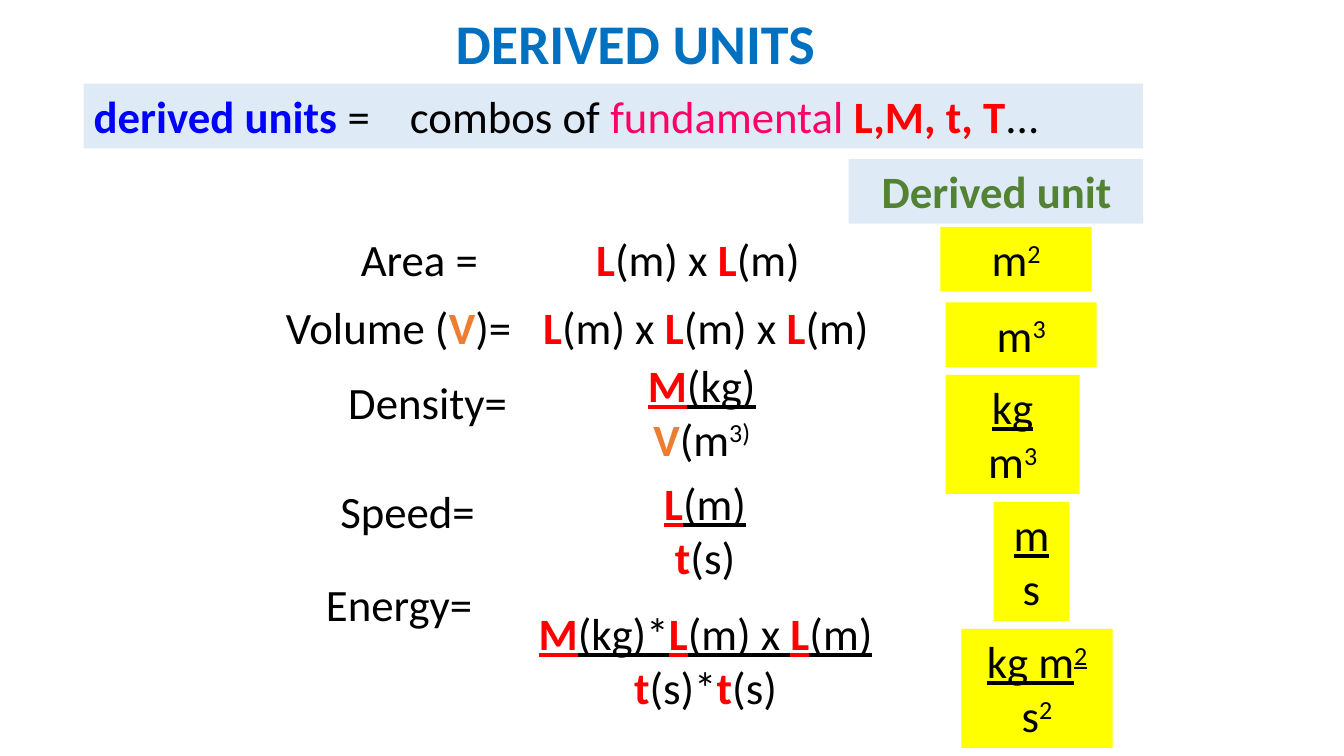
from pptx import Presentation
from pptx import util as u
from pptx.dml.color import RGBColor
from pptx.enum import shapes, text
from lxml import etree

COLORS = {
    "black": "000000", "blue": "0000FF", "pink": "FF0066", "red": "FF0000",
    "orange": "ED7D31", "green": "548235", "title": "0070C0",
    "pale": "DEEBF7", "yellow": "FFFF00", "white": "FFFFFF",
}
NAMESPACE = "http://schemas.openxmlformats.org/drawingml/2006/main"
LEFT, CENTER = text.PP_ALIGN.LEFT, text.PP_ALIGN.CENTER
HEIGHTS = {1: 1.63, 2: 3.0}


def plain(words, **style):
    return words, {"color": "black", **style}


def bold(words, color="red", **style):
    return words, {"color": color, "bold": True, **style}


def power(words, **style):
    return plain(words, raised=True, **style)


class UnitsSlide:
    font = "Calibri"
    size = 32

    def __init__(self, deck):
        self.page = deck.slides.add_slide(deck.slide_layouts[5])

    def place(self, box, left, top, width, height):
        frame = {"left": left, "top": top, "width": width, "height": height}
        for name, value in frame.items():
            setattr(box, name, u.Cm(value))

    def fill(self, box, color):
        box.fill.solid()
        box.fill.fore_color.rgb = RGBColor.from_string(COLORS[color])

    def add_lines(self, box, lines, align=CENTER, size=None, inset=0.25):
        frame = box.text_frame
        layout = {
            "word_wrap": True,
            "auto_size": text.MSO_AUTO_SIZE.SHAPE_TO_FIT_TEXT,
            "vertical_anchor": text.MSO_ANCHOR.TOP,
            "margin_left": u.Cm(inset),
        }
        for name, value in layout.items():
            setattr(frame, name, value)
        for index, line in enumerate(lines):
            para = frame.add_paragraph() if index else frame.paragraphs[0]
            para.alignment = align
            for words, style in line:
                self.add_span(para, words, size or self.size, **style)

    def add_span(self, para, words, size, color, bold=False, underline=False, raised=False):
        span = para.add_run()
        span.text = words
        values = {"name": self.font, "size": u.Pt(size), "bold": bold, "underline": underline}
        for name, value in values.items():
            setattr(span.font, name, value)
        span.font.color.rgb = RGBColor.from_string(COLORS[color])
        if raised:
            span._r.get_or_add_rPr().set("baseline", "30000")

    def add_title(self, words, left, top, width, height):
        box = self.page.shapes.title
        self.place(box, left, top, width, height)
        self.fill(box, "white")
        self.add_lines(box, [[bold(words, "title")]], LEFT, 40)

    def add_label(self, left, top, width, lines, **style):
        box = self.page.shapes.add_textbox(0, 0, 0, 0)
        self.place(box, left, top, width, HEIGHTS[len(lines)])
        self.add_lines(box, lines, **style)

    def add_panel(self, left, top, width, lines, color="yellow", **style):
        box = self.page.shapes.add_shape(shapes.MSO_SHAPE.RECTANGLE, 0, 0, 0, 0)
        self.place(box, left, top, width, HEIGHTS[len(lines)])
        box.shadow.inherit = False
        box.line.fill.background()
        self.fill(box, color)
        self.add_lines(box, lines, **style)
        return box

    def add_tab_stop(self, box, position):
        properties = box.text_frame.paragraphs[0]._p.get_or_add_pPr()
        stops = etree.SubElement(properties, f"{{{NAMESPACE}}}tabLst")
        etree.SubElement(stops, f"{{{NAMESPACE}}}tab", pos=str(u.Cm(position)), algn="l")


def main():
    deck = Presentation()
    deck.slide_width, deck.slide_height = u.Cm(33.87), u.Cm(19.05)
    slide = UnitsSlide(deck)
    slide.add_title("DERIVED UNITS", 11.23, 0.08, 10.8, 1.95)

    definition = [
        bold("derived units ", "blue"), plain("=\tcombos of "),
        plain("fundamental ", color="pink"), bold("L,M, t, T"), plain("..."),
    ]
    banner = slide.add_panel(2.11, 2.11, 26.7, [definition], "pale", align=LEFT)
    slide.add_tab_stop(banner, 7.97)
    slide.add_panel(21.39, 4.01, 7.42, [[bold("Derived unit", "green")]], "pale",
                    align=LEFT, inset=0.83)

    names = [
        (7.62, 5.72, 4.88, [plain("Area =")], 1.27),
        (6.55, 7.42, 6.99, [plain("Volume ("), bold("V", "orange"), plain(")=")], 0.25),
        (8.05, 9.32, 5.46, [plain("Density=")], 0.25),
        (8.05, 12.07, 4.45, [plain("Speed=")], 0.25),
        (7.62, 14.4, 4.88, [plain("Energy=")], 0.25),
    ]
    for left, top, width, line, inset in names:
        slide.add_label(left, top, width, [line], inset=inset)

    line_under = {"underline": True}
    length, times = bold("L"), plain("(m) x ")
    meters, seconds = plain("(m)"), bold("t")
    top_length, top_meters = bold("L", **line_under), plain("(m)", **line_under)
    top_mass = bold("M", **line_under)
    formulas = [
        (14.22, 5.72, 6.74, [[length, times, length, meters]]),
        (13.13, 7.42, 9.32, [[length, times, length, times, length, meters]]),
        (13.34, 8.89, 8.69, [[top_mass, plain("(kg)", **line_under)],
                             [bold("V", "orange"), plain("(m"), power("3)")]]),
        (13.54, 11.86, 8.46, [[top_length, top_meters], [seconds, plain("(s)")]]),
        (12.8, 15.14, 9.96, [[top_mass, plain("(kg)*", **line_under), top_length,
                              plain("(m) x ", **line_under), top_length, top_meters],
                             [seconds, plain("(s)*"), seconds, plain("(s)")]]),
    ]
    for formula in formulas:
        slide.add_label(*formula)

    units = [
        (23.7, 5.72, 3.81, [[plain("m"), power("2")]]),
        (23.83, 7.62, 3.81, [[plain("m"), power("3")]]),
        (23.83, 9.45, 3.38, [[plain("kg", **line_under)], [plain("m"), power("3")]]),
        (25.04, 12.65, 1.91, [[plain("m", **line_under)], [plain("s")]]),
        (24.23, 15.85, 3.81, [[plain("kg m", **line_under), power("2", **line_under)],
                              [plain("s"), power("2")]]),
    ]
    for unit in units:
        slide.add_panel(*unit)

    deck.save("out.pptx")


if __name__ == "__main__":
    main()
